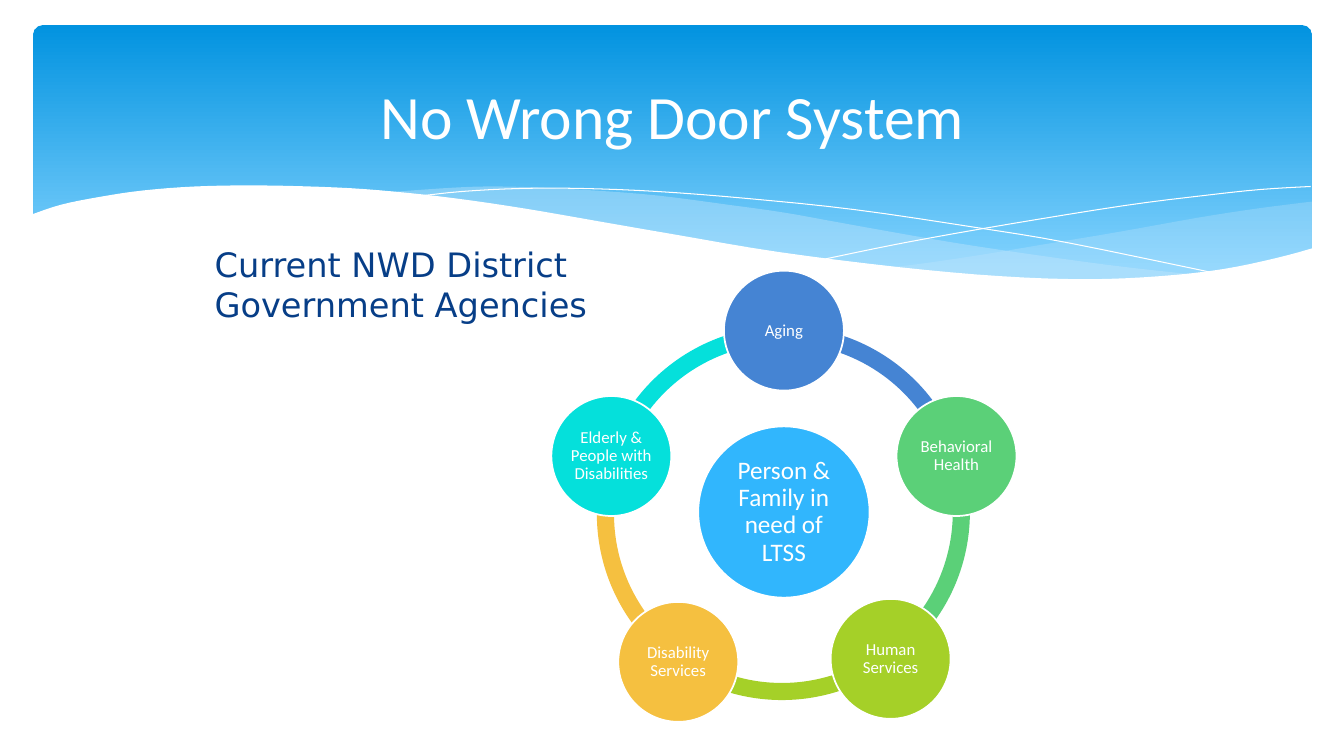
"""Build the No Wrong Door System slide with its ring of district agencies."""
from dataclasses import dataclass
from math import cos, radians, sin

from lxml.etree import SubElement
from pptx import Presentation
from pptx.dml.color import RGBColor
from pptx.enum.shapes import MSO_SHAPE as Preset
from pptx.enum.text import MSO_ANCHOR as Anchor, PP_ALIGN as Align
from pptx.oxml.ns import qn
from pptx.util import Inches, Pt

TITLE = "No Wrong Door System"
SUBTITLE = "Current NWD District Government Agencies"
HUB = "Person & Family in need of LTSS"
AGENCIES = [
    {"label": "Aging", "color": "4584D3"},
    {"label": "Behavioral Health", "color": "5BD078"},
    {"label": "Human Services", "color": "A5D028", "arc_shift": (-0.02, 0.02)},
    {"label": "Disability Services", "color": "F5C040", "shift": (0.01, 0.03),
     "arc_shift": (-0.01, 0.02)},
    {"label": "Elderly & People with Disabilities", "color": "05E0DB"},
]

RIGHT_VEIL = [
    [(13.01, 2), (12.46, 2.07), (11.88, 2.16), (11.1, 2.3), (10.38, 2.42),
     (9.72, 2.53), (9.11, 2.62), (8.82, 2.65)],
    [(8.82, 2.65), (9.4, 2.71), (9.93, 2.75), (10.41, 2.77), (10.85, 2.78),
     (11.38, 2.76), (11.86, 2.72), (12.28, 2.65), (12.66, 2.57), (13.01, 2.47)],
]
CENTER_VEIL = [
    [(11.9, 2.73), (11.16, 2.65), (10.34, 2.54), (9.41, 2.4), (8.39, 2.22),
     (7.78, 2.11), (7.21, 2.03), (6.52, 1.94), (5.89, 1.89), (5.32, 1.86),
     (4.82, 1.85), (4.37, 1.87), (3.82, 1.91)],
    [(3.82, 1.91), (4.56, 1.99), (5.39, 2.11), (5.99, 2.22), (7.06, 2.4),
     (8.02, 2.55), (8.87, 2.66), (9.63, 2.74), (10.3, 2.77), (10.9, 2.78),
     (11.43, 2.77), (11.9, 2.73)],
]
FALLING_LINE = [(4.12, 1.95), (4.58, 1.9), (5.16, 1.87), (5.77, 1.87), (6.52, 1.9),
                (7.42, 1.97), (8.48, 2.08), (9.7, 2.26), (10.6, 2.41), (12.1, 2.72)]
RISING_LINE = [(8.18, 2.57), (8.96, 2.41), (9.97, 2.23), (11.15, 2.04),
               (11.94, 1.94), (12.5, 1.88), (13, 1.85)]
WAVE = [
    [(13.03, 2.46), (12.66, 2.56), (12.13, 2.67), (11.51, 2.74), (10.78, 2.77),
     (9.92, 2.74), (8.91, 2.65), (7.72, 2.5), (6.71, 2.33), (5.96, 2.2),
     (5.21, 2.07), (4.53, 1.97), (3.9, 1.9), (3.33, 1.86), (2.58, 1.84),
     (1.94, 1.85), (1.42, 1.89), (1.01, 1.95), (0.61, 2.03), (0.31, 2.13)],
    [(0.31, 3.29), (13.03, 3.29)],
]


@dataclass(frozen=True)
class Theme:
    white: str = "FFFFFF"
    sky_top: str = "0293E0"
    sky_bottom: str = "83D3FE"
    veil: str = "C6E7FC"
    hub: str = "31B6FD"
    navy: str = "073E87"
    font: str = "Calibri"
    subtitle_font: str = "DejaVu Sans"
    title_size: int = 44
    subtitle_size: int = 24
    hub_size: int = 18
    agency_size: int = 12
    outline: float = 1.25


THEME = Theme()
CENTER_X, CENTER_Y = 7.775, 5.08
ORBIT, NODE, HUB_SIZE, RING = 1.8, 1.19, 1.7, 3.69
RING_THICKNESS = 0.046
ARC_UNITS_PER_DEGREE = 0.6


def box(*lengths):
    return [Inches(length) for length in lengths]


def around(x, y, size):
    return box(x - size / 2, y - size / 2, size, size)


def paint(shape, color, opacity=None):
    shape.shadow.inherit = False
    shape.fill.solid()
    shape.fill.fore_color.rgb = RGBColor.from_string(color)
    shape.line.fill.background()
    if opacity is not None:
        tint = shape.element.find(".//" + qn("a:srgbClr"))
        SubElement(tint, qn("a:alpha"), val=str(int(opacity * 100000)))


def write(shape, text, size, color=THEME.white, font=THEME.font, align=Align.CENTER):
    frame = shape.text_frame
    frame.word_wrap = True
    paragraph = frame.paragraphs[0]
    paragraph.text = text
    paragraph.alignment = align
    paragraph.font.name = font
    paragraph.font.size = Pt(size)
    paragraph.font.color.rgb = RGBColor.from_string(color)
    return frame


def smooth_curve(points, steps=4):
    padded = [points[0], *points, points[-1]]
    curve = [points[0]]
    for a, b, c, d in zip(padded, padded[1:], padded[2:], padded[3:]):
        for step in range(1, steps + 1):
            t = step / steps
            curve.append(tuple(
                (2 * q + (r - p) * t + (2 * p - 5 * q + 4 * r - s) * t ** 2
                 + (3 * q - p - 3 * r + s) * t ** 3) / 2
                for p, q, r, s in zip(a, b, c, d)))
    return curve


def add_outline(shapes, edges, close):
    points = [box(*point) for edge in edges for point in smooth_curve(edge)]
    builder = shapes.build_freeform(*points[0], scale=1.0)
    builder.add_line_segments(points[1:], close=close)
    return builder.convert_to_shape()


def add_banner(shapes):
    sky = shapes.add_shape(Preset.ROUNDED_RECTANGLE, *box(0.33, 0.25, 12.68, 2.7))
    sky.adjustments[0] = 0.034
    paint(sky, THEME.sky_top)
    sky.fill.gradient()
    sky.fill.gradient_angle = 270
    for stop, color, position in zip(sky.fill.gradient_stops,
                                     (THEME.sky_top, THEME.sky_bottom), (0, 0.9)):
        stop.color.rgb = RGBColor.from_string(color)
        stop.position = position
    for veil, opacity in ((RIGHT_VEIL, 0.29), (CENTER_VEIL, 0.4)):
        paint(add_outline(shapes, veil, True), THEME.veil, opacity)
    for points in (FALLING_LINE, RISING_LINE):
        strand = add_outline(shapes, [points], False)
        strand.shadow.inherit = False
        strand.fill.background()
        strand.line.color.rgb = RGBColor.from_string(THEME.white)
        strand.line.width = Pt(0)
    paint(add_outline(shapes, WAVE, True), THEME.white)


def add_circle(shapes, x, y, diameter, color, label, size, inset):
    circle = shapes.add_shape(Preset.OVAL, *around(x, y, diameter))
    paint(circle, color)
    circle.line.color.rgb = RGBColor.from_string(THEME.white)
    circle.line.width = Pt(THEME.outline)
    frame = write(circle, label, size)
    frame.vertical_anchor = Anchor.MIDDLE
    frame.margin_left = frame.margin_right = Inches(inset)
    frame.margin_top = frame.margin_bottom = Inches(inset)
    frame.paragraphs[0].line_spacing = 0.9


def add_agency_ring(shapes):
    turn = 360 / len(AGENCIES)
    angles = [(270 + turn * index) % 360 for index in range(len(AGENCIES))]
    for agency, angle in reversed(list(zip(AGENCIES, angles))):
        dx, dy = agency.get("arc_shift", (0, 0))
        arc = shapes.add_shape(Preset.BLOCK_ARC,
                               *around(CENTER_X + dx, CENTER_Y + dy, RING))
        arc.adjustments[0] = angle * ARC_UNITS_PER_DEGREE
        arc.adjustments[1] = (angle + turn) % 360 * ARC_UNITS_PER_DEGREE
        arc.adjustments[2] = RING_THICKNESS
        paint(arc, agency["color"])
    add_circle(shapes, CENTER_X, CENTER_Y, HUB_SIZE, THEME.hub, HUB, THEME.hub_size, 0.03)
    for agency, angle in zip(AGENCIES, angles):
        dx, dy = agency.get("shift", (0, 0))
        add_circle(shapes, CENTER_X + ORBIT * cos(radians(angle)) + dx,
                   CENTER_Y + ORBIT * sin(radians(angle)) + dy, NODE,
                   agency["color"], agency["label"], THEME.agency_size, 0.02)


def main():
    deck = Presentation()
    deck.slide_width, deck.slide_height = box(13.33, 7.5)
    slide = deck.slides.add_slide(deck.slide_layouts[5])
    shapes = slide.shapes
    add_banner(shapes)

    title = shapes.title
    title.left, title.top, title.width, title.height = box(0.92, 0.41, 11.5, 1.45)
    write(title, TITLE, THEME.title_size).vertical_anchor = Anchor.MIDDLE
    title.element.getparent().append(title.element)

    add_agency_ring(shapes)
    subtitle = shapes.add_textbox(*box(2.03, 2.37, 4, 0.91))
    write(subtitle, SUBTITLE, THEME.subtitle_size, THEME.navy,
          THEME.subtitle_font, Align.LEFT)
    deck.save("out.pptx")


if __name__ == "__main__":
    main()
